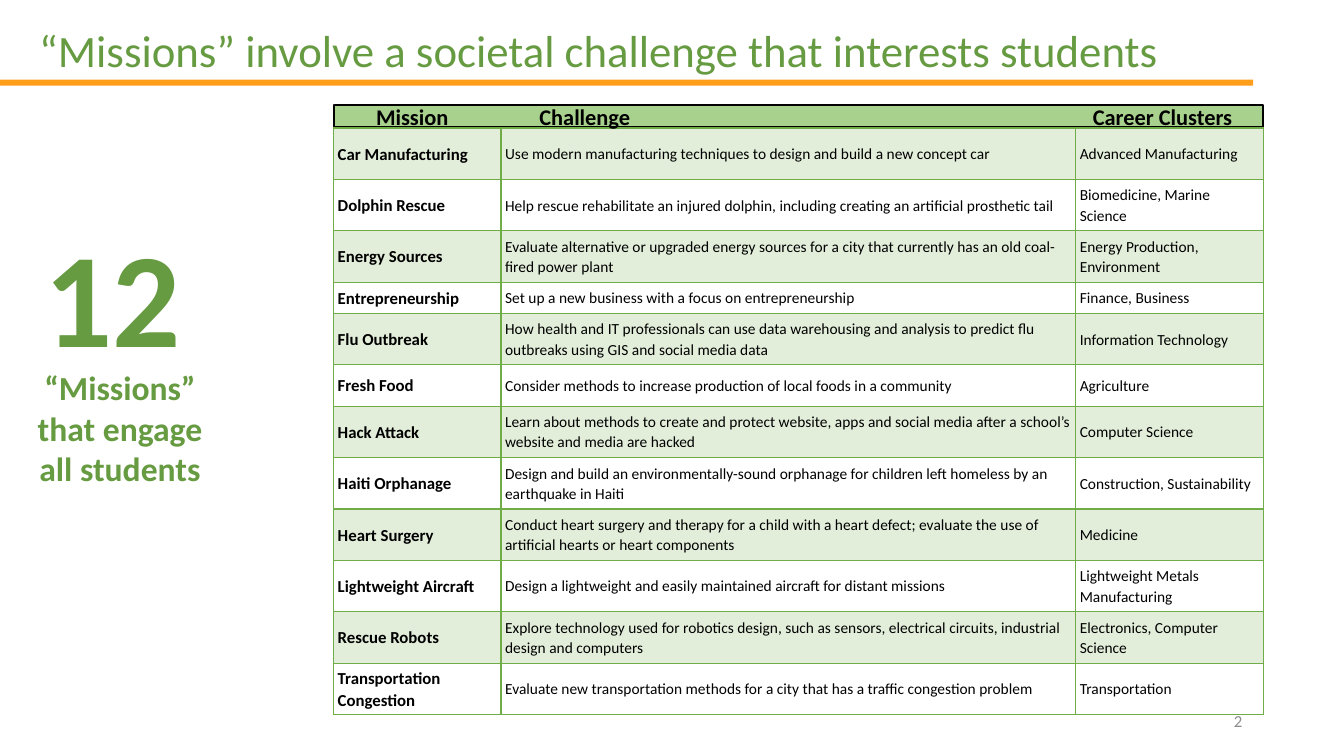
from lxml.etree import SubElement
from pptx import Presentation
from pptx.dml.color import RGBColor
from pptx.enum.shapes import MSO_SHAPE
from pptx.enum.text import MSO_ANCHOR, PP_ALIGN
from pptx.oxml import parse_xml
from pptx.oxml.ns import nsdecls, qn
from pptx.util import Inches, Pt

GREEN = RGBColor(0x66, 0x9B, 0x41)
LEAF = RGBColor(0x70, 0xAD, 0x47)
PALE = RGBColor(0xA9, 0xD1, 0x8E)
ORANGE = RGBColor(0xFF, 0x9E, 0x1B)
GREY = RGBColor(0x8C, 0x8C, 0x8C)
BLACK = RGBColor(0, 0, 0)

WIDTHS = [1.66, 5.7, 1.86]
TALL = 0.51
SHORT = {"Entrepreneurship": 0.31, "Fresh Food": 0.41}
MISSIONS = [
    ("Car Manufacturing",
     "Use modern manufacturing techniques to design and build a new concept car",
     "Advanced Manufacturing"),
    ("Dolphin Rescue",
     "Help rescue rehabilitate an injured dolphin, including creating an artificial prosthetic tail",
     "Biomedicine, Marine Science"),
    ("Energy Sources",
     "Evaluate alternative or upgraded energy sources for a city that currently has an old coal-fired power plant",
     "Energy Production, Environment"),
    ("Entrepreneurship",
     "Set up a new business with a focus on entrepreneurship",
     "Finance, Business"),
    ("Flu Outbreak",
     "How health and IT professionals can use data warehousing and analysis to predict flu outbreaks "
     "using GIS and social media data",
     "Information Technology"),
    ("Fresh Food",
     "Consider methods to increase production of local foods in a community",
     "Agriculture"),
    ("Hack Attack",
     "Learn about methods to create and protect website, apps and social media after a school’s "
     "website and media are hacked",
     "Computer Science"),
    ("Haiti Orphanage",
     "Design and build an environmentally-sound orphanage for children left homeless by an earthquake in Haiti",
     "Construction, Sustainability"),
    ("Heart Surgery",
     "Conduct heart surgery and therapy for a child with a heart defect; evaluate the use of "
     "artificial hearts or heart components",
     "Medicine"),
    ("Lightweight Aircraft",
     "Design a lightweight and easily maintained aircraft for distant missions",
     "Lightweight Metals Manufacturing"),
    ("Rescue Robots",
     "Explore technology used for robotics design, such as sensors, electrical circuits, industrial "
     "design and computers",
     "Electronics, Computer Science"),
    ("Transportation Congestion",
     "Evaluate new transportation methods for a city that has a traffic congestion problem",
     "Transportation"),
]


class Deck:
    """Hold the slide and its text style, and draw each kind of element."""

    def __init__(self, slide, face="Calibri"):
        self.shapes = slide.shapes
        self.face = face

    def style(self, para, size, color, bold=False):
        font = para.font
        font.name, font.size, font.bold = self.face, Pt(size), bold
        font.color.rgb = color

    def text(self, box, words, size, color, bold=False, align=PP_ALIGN.LEFT,
             anchor=MSO_ANCHOR.MIDDLE, inset=0.1, tabs=()):
        frame = self.shapes.add_textbox(*map(Inches, box)).text_frame
        frame.word_wrap = True
        frame.vertical_anchor = anchor
        frame.margin_left = Inches(inset)
        para = frame.paragraphs[0]
        para.text = words
        para.alignment = align
        if tabs:
            stops = SubElement(para._p.get_or_add_pPr(), qn("a:tabLst"))
            for stop in tabs:
                SubElement(stops, qn("a:tab"), pos=str(Inches(stop)), algn="l")
        self.style(para, size, color, bold)

    def bar(self, box, fill, line=None):
        shape = self.shapes.add_shape(MSO_SHAPE.RECTANGLE, *map(Inches, box))
        shape.shadow.inherit = False
        shape.fill.solid()
        shape.fill.fore_color.rgb = fill
        if line is None:
            shape.line.fill.background()
        else:
            shape.line.color.rgb = line
            shape.line.width = Pt(1.5)

    def cell(self, cell, words, size, bold, shade):
        cell.vertical_anchor = MSO_ANCHOR.MIDDLE
        cell.margin_left = cell.margin_right = Inches(0.04)
        cell.margin_top = cell.margin_bottom = Inches(0.04)
        para = cell.text_frame.paragraphs[0]
        para.text = words
        para.line_spacing = 1.07
        self.style(para, size, BLACK, bold)
        props = cell._tc.get_or_add_tcPr()
        if shade:
            cell.fill.solid()
            cell.fill.fore_color.rgb = LEAF
            SubElement(props.find(".//" + qn("a:srgbClr")), qn("a:alpha"), val="20000")
        else:
            cell.fill.background()
        for spot, side in enumerate("LRTB"):
            props.insert(spot, parse_xml(
                f'<a:ln{side} {nsdecls("a")} w="{Pt(1)}"><a:solidFill>'
                f'<a:srgbClr val="{LEAF}"/></a:solidFill></a:ln{side}>'))

    def table(self, left, top, widths, rows):
        heights = [SHORT.get(row[0], TALL) for row in rows]
        grid = self.shapes.add_table(
            len(rows), len(widths), Inches(left), Inches(top),
            Inches(sum(widths)), Inches(sum(heights))).table
        grid.first_row = grid.horz_banding = False
        for col, width in zip(grid.columns, widths):
            col.width = Inches(width)
        for r, row in enumerate(rows):
            grid.rows[r].height = Inches(heights[r])
            for c, words in enumerate(row):
                self.cell(grid.cell(r, c), words, 11 if c else 12, c == 0, r % 2 == 0)


def main():
    show = Presentation()
    show.slide_width, show.slide_height = Inches(13.33), Inches(7.5)
    deck = Deck(show.slides.add_slide(show.slide_layouts[6]))
    deck.text((0.29, 0.08, 12.44, 0.83),
              "“Missions” involve a societal challenge that interests students", 32, GREEN)
    deck.text((0.12, 1.41, 2, 3), "12", 96, GREEN, True, PP_ALIGN.CENTER)
    deck.text((0.1, 3.43, 2.18, 1.63), "“Missions” that engage all students",
              24, GREEN, True, PP_ALIGN.CENTER)
    deck.text((9.42, 6.95, 3, 0.4), "2", 12, GREY, align=PP_ALIGN.RIGHT)
    deck.bar((-0.01, 0.79, 12.44, 0.06), ORANGE)
    deck.bar((3.31, 1.04, 9.22, 0.22), PALE, BLACK)
    deck.table(3.31, 1.27, WIDTHS, MISSIONS)
    deck.text((3.13, 0.97, 9.82, 0.37), "Mission\tChallenge\tCareer Clusters", 16, BLACK,
              True, anchor=MSO_ANCHOR.TOP, inset=0.6, tabs=(1.62, 7.11))
    show.save("out.pptx")


if __name__ == "__main__":
    main()
